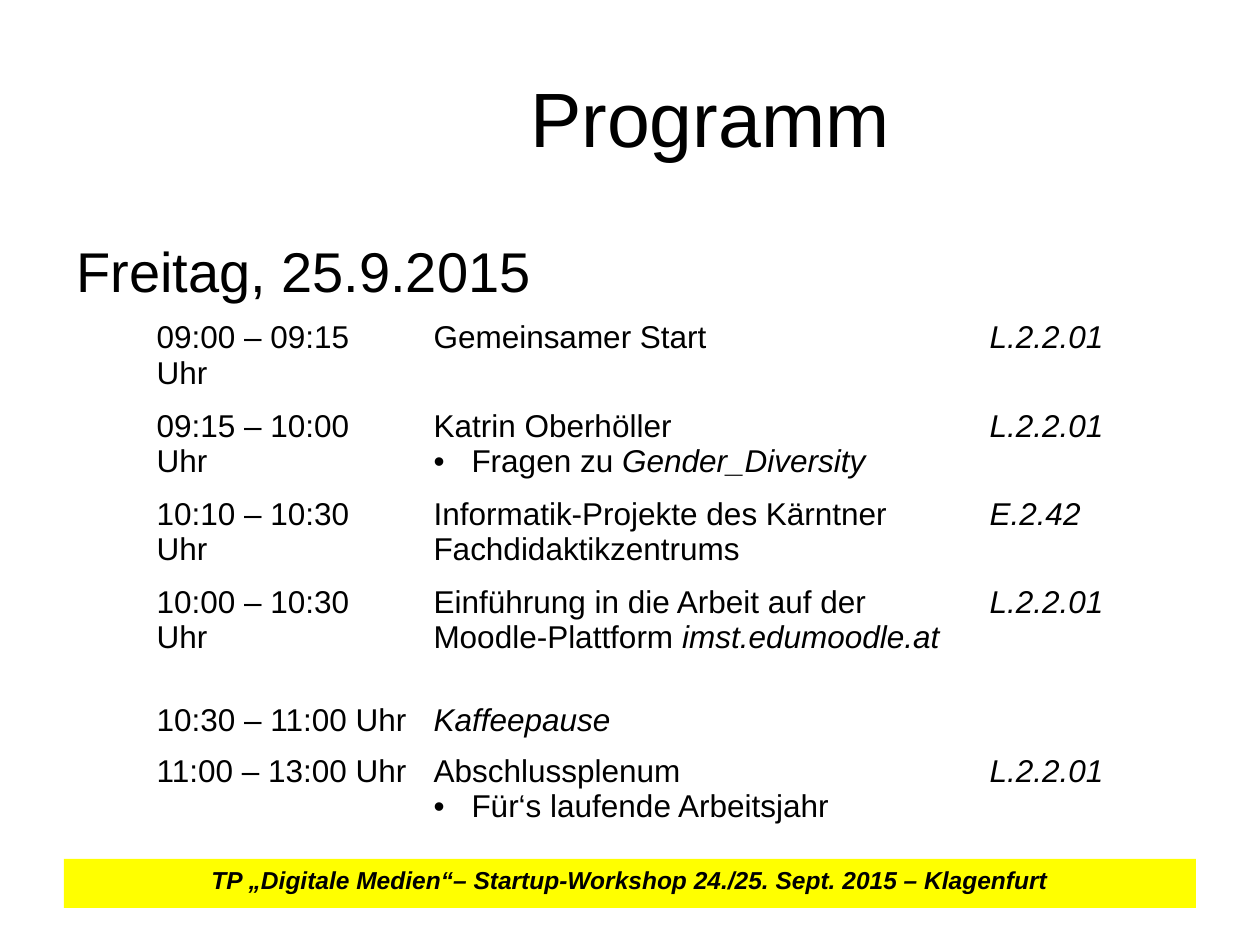
from dataclasses import dataclass

import pptx
import pptx.dml.color
import pptx.enum.shapes
import pptx.enum.text
import pptx.oxml.ns
import pptx.util
from lxml import etree

PX_PER_INCH = 126


@dataclass(frozen=True)
class Theme:
    font: str = "Arial"
    text: str = "000000"
    banner: str = "FFFF00"
    title_size: int = 44
    heading_size: int = 32
    table_size: int = 18
    banner_size: int = 14


THEME = Theme()
CENTER = pptx.enum.text.PP_ALIGN.CENTER
LEFT = pptx.enum.text.PP_ALIGN.LEFT

# Each row: height, time, lines of the item, room.
# A line is (has bullet, [(text, italic), ...]).
SCHEDULE = [
    (83, "09:00 – 09:15 Uhr", [(False, [("Gemeinsamer Start", False)])], "L.2.2.01"),
    (83, "09:15 – 10:00 Uhr",
     [(False, [("Katrin Oberhöller", False)]),
      (True, [("Fragen zu ", False), ("Gender_Diversity", True)])], "L.2.2.01"),
    (83, "10:10 – 10:30 Uhr",
     [(False, [("Informatik-Projekte des Kärntner Fachdidaktikzentrums", False)])],
     "E.2.42"),
    (118, "10:00 – 10:30 Uhr",
     [(False, [("Einführung in die Arbeit auf der Moodle-Plattform ", False),
               ("imst.edumoodle.at", True)])], "L.2.2.01"),
    (51, "10:30 – 11:00 Uhr", [(False, [("Kaffeepause", True)])], ""),
    (83, "11:00 – 13:00 Uhr",
     [(False, [("Abschlussplenum", False)]),
      (True, [("Für‘s laufende Arbeitsjahr", False)])], "L.2.2.01"),
    (51, "", [], ""),
    (51, "", [], ""),
]


def px(length):
    return pptx.util.Emu(round(length * 914400 / PX_PER_INCH))


def color(value):
    return pptx.dml.color.RGBColor.from_string(value)


def add_run(paragraph, text, size, bold=False, italic=False):
    run = paragraph.add_run()
    run.text = text
    run.font.name = THEME.font
    run.font.size = pptx.util.Pt(size)
    run.font.bold = bold
    run.font.italic = italic
    run.font.color.rgb = color(THEME.text)


def add_bullet(paragraph, indent):
    properties = paragraph._p.get_or_add_pPr()
    properties.set("marL", str(px(indent)))
    properties.set("indent", str(-px(indent)))
    bullet_font = etree.SubElement(properties, pptx.oxml.ns.qn("a:buFont"))
    bullet_font.set("typeface", THEME.font)
    bullet = etree.SubElement(properties, pptx.oxml.ns.qn("a:buChar"))
    bullet.set("char", "•")


def place_title(slide, left, top, width, height):
    title = slide.shapes.title
    title.left, title.top = px(left), px(top)
    title.width, title.height = px(width), px(height)
    frame = title.text_frame
    frame.vertical_anchor = pptx.enum.text.MSO_ANCHOR.MIDDLE
    paragraph = frame.paragraphs[0]
    paragraph.alignment = CENTER
    add_run(paragraph, "Programm", THEME.title_size)


def add_heading(slide, left, top, width, height):
    box = slide.shapes.add_textbox(px(left), px(top), px(width), px(height))
    frame = box.text_frame
    frame.word_wrap = True
    frame.margin_top = px(12)
    paragraph = frame.paragraphs[0]
    paragraph.alignment = LEFT
    add_run(paragraph, "Freitag, 25.9.2015", THEME.heading_size)


def fill_cell(cell, lines):
    frame = cell.text_frame
    for index, (has_bullet, runs) in enumerate(lines):
        paragraph = frame.paragraphs[0] if index == 0 else frame.add_paragraph()
        if has_bullet:
            add_bullet(paragraph, 38)
        for text, italic in runs:
            add_run(paragraph, text, THEME.table_size, italic=italic)


def add_schedule(slide, left, top, column_widths):
    height = sum(row[0] for row in SCHEDULE)
    table = slide.shapes.add_table(
        len(SCHEDULE), len(column_widths), px(left), px(top),
        px(sum(column_widths)), px(height)).table
    table.first_row = False
    table.horz_banding = False
    for column, width in zip(table.columns, column_widths):
        column.width = px(width)
    for index, (row_height, time, item, room) in enumerate(SCHEDULE):
        table.rows[index].height = px(row_height)
        time_lines = [(False, [(time, False)])] if time else []
        room_lines = [(False, [(room, True)])] if room else []
        for position, lines in enumerate((time_lines, item, room_lines)):
            cell = table.cell(index, position)
            cell.fill.background()
            fill_cell(cell, lines)


def add_banner(slide, left, top, width, height):
    banner = slide.shapes.add_shape(
        pptx.enum.shapes.MSO_SHAPE.RECTANGLE,
        px(left), px(top), px(width), px(height))
    banner.shadow.inherit = False
    banner.fill.solid()
    banner.fill.fore_color.rgb = color(THEME.banner)
    banner.line.fill.background()
    frame = banner.text_frame
    frame.word_wrap = True
    frame.vertical_anchor = pptx.enum.text.MSO_ANCHOR.TOP
    paragraph = frame.paragraphs[0]
    paragraph.alignment = CENTER
    add_run(paragraph,
            "TP „Digitale Medien“– Startup-Workshop 24./25. Sept. 2015 – Klagenfurt",
            THEME.banner_size, bold=True, italic=True)


def main():
    presentation = pptx.Presentation()
    presentation.slide_width = px(1260)
    presentation.slide_height = px(945)
    slide = presentation.slides.add_slide(presentation.slide_layouts[5])

    # Title and day
    place_title(slide, 223, 38, 974, 157)
    add_heading(slide, 64, 224, 1134, 624)

    # Timetable
    add_schedule(slide, 144, 314, (277, 556, 169))

    # Event banner
    add_banner(slide, 64, 859, 1132, 49)

    presentation.save("out.pptx")


if __name__ == "__main__":
    main()
